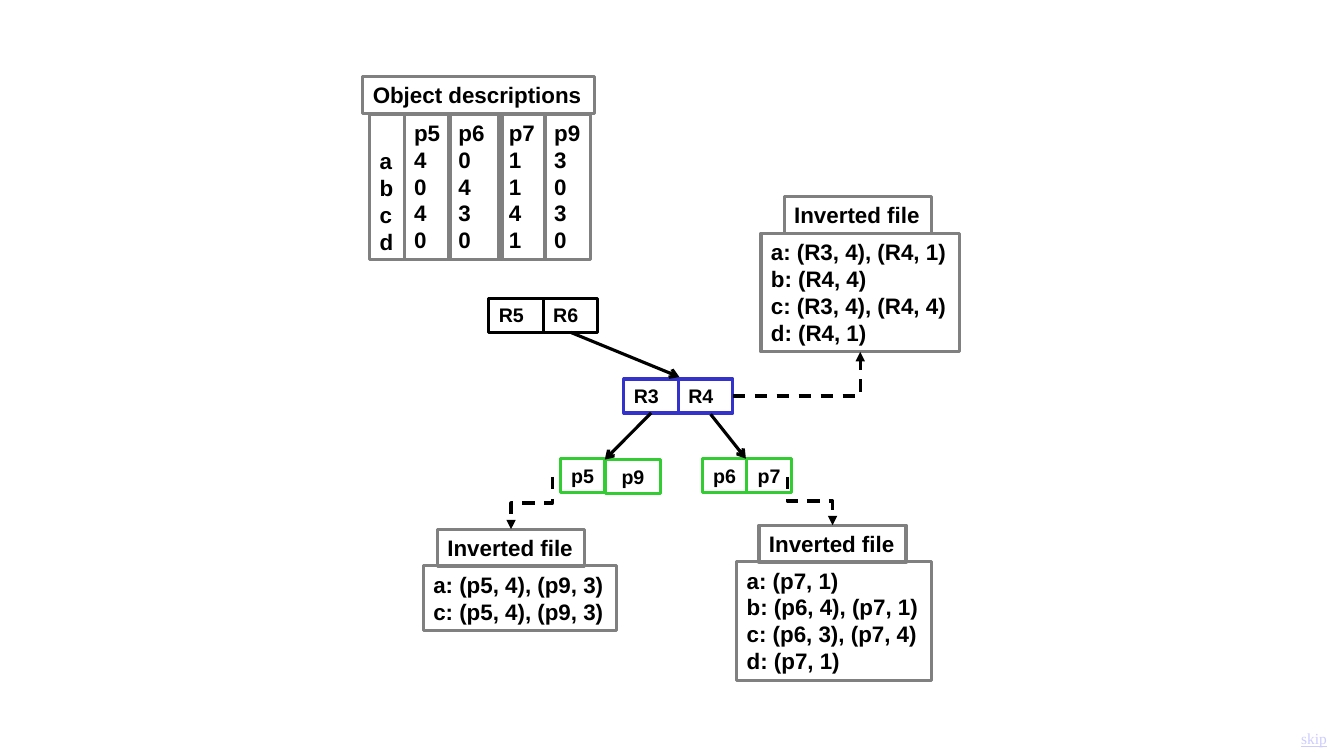
from pptx import Presentation
from pptx.dml.color import RGBColor
from pptx.enum import dml, shapes, text
from pptx.oxml.ns import qn
from pptx.util import Pt
from lxml import etree

BLACK = RGBColor(0, 0, 0)
GRAY = RGBColor(0x80, 0x80, 0x80)
BLUE = RGBColor(0x33, 0x33, 0xCC)
GREEN = RGBColor(0x33, 0xCC, 0x33)
LAVENDER = RGBColor(0xCC, 0xCC, 0xFF)
LINE_W = Pt(2.25)
NODE_H = 24.3
HEADER_W = 105
LINE_H = 19.4
INSETS = 7.2


def text_height(count):
    return INSETS + LINE_H * count


def add_box(s, x, y, w, h, lines, color, size, align=text.PP_ALIGN.LEFT):
    sp = s.shapes.add_shape(shapes.MSO_SHAPE.RECTANGLE, Pt(x), Pt(y), Pt(w), Pt(h))
    sp.shadow.inherit = False
    sp.fill.background()
    sp.line.color.rgb = color
    sp.line.width = LINE_W
    tf = sp.text_frame
    tf.text = "\n".join(lines)
    tf.vertical_anchor = text.MSO_ANCHOR.TOP
    for p in tf.paragraphs:
        p.alignment = align
        p.font.name = "Arial"
        p.font.size = Pt(size)
        p.font.bold = True
        p.font.color.rgb = BLACK
    return sp


def add_node(s, x, y, w, label, color, align=text.PP_ALIGN.LEFT):
    sp = add_box(s, x, y, w, NODE_H, [label], color, 14, align)
    sp.text_frame.word_wrap = True
    return sp


def add_panel(s, x, y, w, lines):
    sp = add_box(s, x, y, w, text_height(len(lines)), lines, GRAY, 16)
    sp.text_frame.word_wrap = False
    sp.text_frame.auto_size = text.MSO_AUTO_SIZE.SHAPE_TO_FIT_TEXT
    return sp


def add_inverted_file(s, x, y, w, header_x, lines):
    panel = add_panel(s, x, y + 26.2, w, lines)
    add_panel(s, header_x, y, HEADER_W, ["Inverted file"])
    return panel


def add_object_table(s):
    top = 81.4
    columns = [
        (288.7, 33.1, ["p5", "4", "0", "4", "0"]),
        (320.4, 38.2, ["p6", "0", "4", "3", "0"]),
        (356.4, 33.1, ["p7", "1", "1", "4", "1"]),
        (388.8, 33.1, ["p9", "3", "0", "3", "0"]),
    ]
    for x, w, lines in columns:
        add_panel(s, x, top, w, lines)
    labels = add_box(s, 264.2, top, 24.5, text_height(5), list("abcd"), GRAY, 16)
    labels.text_frame.vertical_anchor = text.MSO_ANCHOR.BOTTOM
    add_panel(s, 259.2, 54.7, 165.6, ["Object descriptions"])


def add_line(s, kind, x1, y1, x2, y2, head):
    cn = s.shapes.add_connector(kind, Pt(x1), Pt(y1), Pt(x2), Pt(y2))
    cn.line.color.rgb = BLACK
    cn.line.width = LINE_W
    if kind == shapes.MSO_CONNECTOR.ELBOW:
        cn.line.dash_style = dml.MSO_LINE.DASH
    spPr = cn._element.spPr
    etree.SubElement(spPr.find(qn("a:ln")), qn("a:tailEnd"), type=head)
    etree.SubElement(spPr, qn("a:effectLst"))
    return cn


def add_arrow(s, x1, y1, x2, y2):
    return add_line(s, shapes.MSO_CONNECTOR.STRAIGHT, x1, y1, x2, y2, "arrow")


def add_corner(s, x1, y1, x2, y2):
    cn = add_line(s, shapes.MSO_CONNECTOR.ELBOW, x1, y1, x2, y2, "triangle")
    cn._element.spPr.find(qn("a:prstGeom")).set("prst", "bentConnector2")
    return cn


def add_drop(s, x1, y1, x2, y2):
    cx, cy = (x1 + x2) / 2, (y1 + y2) / 2
    half_w, half_h = (y2 - y1) / 2, (x2 - x1) / 2
    cn = add_line(s, shapes.MSO_CONNECTOR.ELBOW, cx - half_w, cy + half_h,
                  cx + half_w, cy - half_h, "triangle")
    cn._element.spPr.find(qn("a:xfrm")).set("rot", "5400000")


def add_skip(s):
    sp = s.shapes.add_textbox(Pt(922.3), Pt(517), Pt(33.1), Pt(20.9))
    tf = sp.text_frame
    tf.word_wrap = True
    tf.text = "skip"
    f = tf.paragraphs[0].font
    f.name = "Times New Roman"
    f.size = Pt(11)
    f.underline = True
    f.color.rgb = LAVENDER


def main():
    prs = Presentation()
    prs.slide_width, prs.slide_height = Pt(960), Pt(540)
    s = prs.slides.add_slide(prs.slide_layouts[6])

    center = text.PP_ALIGN.CENTER
    add_node(s, 432.7, 328.3, 38.9, "p9", GREEN, center)
    for x, label in [(400.3, "p5"), (533.5, "p7"), (501.8, "p6")]:
        add_node(s, x, 327.6, 31.7, label, GREEN, center)
    r4 = add_node(s, 484.6, 270.7, 38.9, "R4", BLUE)
    r3 = add_node(s, 445.7, 270.7, 38.9, "R3", BLUE)
    add_node(s, 349.2, 213.1, 38.9, "R5", BLACK)
    r6 = add_node(s, 388.1, 213.1, 38.9, "R6", BLACK)

    add_arrow(s, 465.1, 295, 432, 328.3).begin_connect(r3, 2)
    add_arrow(s, 507.6, 295.9, 532.8, 327.6)
    add_arrow(s, 407.5, 237.4, 485.3, 269.3).begin_connect(r6, 2)

    add_object_table(s)
    root_file = add_inverted_file(s, 543.6, 140.4, 141.8, 560.2, [
        "a: (R3, 4), (R4, 1)", "b: (R4, 4)", "c: (R3, 4), (R4, 4)", "d: (R4, 1)"])
    add_inverted_file(s, 526.3, 375.1, 139, 542.2, [
        "a: (p7, 1)", "b: (p6, 4), (p7, 1)", "c: (p6, 3), (p7, 4)", "d: (p7, 1)"])
    add_inverted_file(s, 302.4, 378, 138.2, 312.5, [
        "a: (p5, 4), (p9, 3)", "c: (p5, 4), (p9, 3)"])

    corner = add_corner(s, 523.4, 283, 614.2, 251.3)
    corner.begin_connect(r4, 3)
    corner.end_connect(root_file, 2)
    add_drop(s, 562.3, 340.6, 594.7, 375.1)
    add_drop(s, 394.6, 340.6, 365, 378)
    add_skip(s)
    prs.save("out.pptx")


if __name__ == "__main__":
    main()
